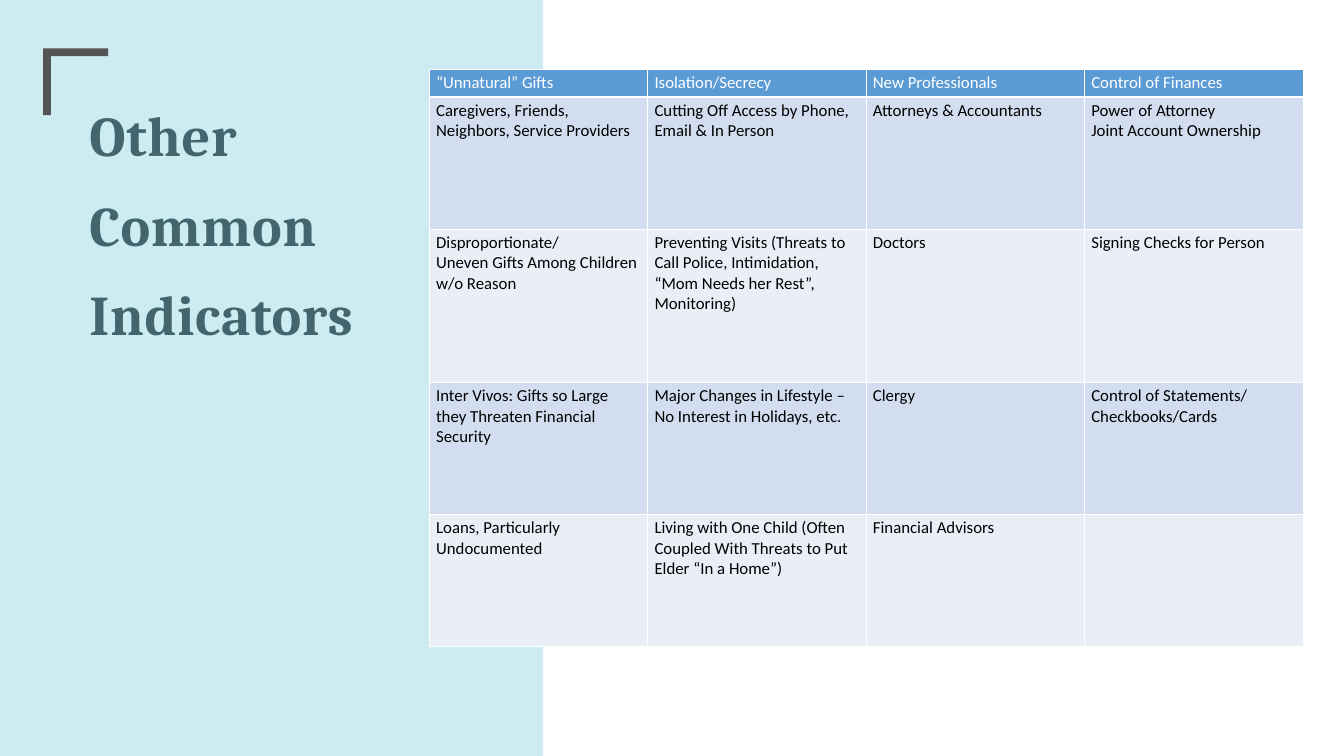
from lxml.etree import SubElement
from pptx import Presentation
from pptx.dml.color import RGBColor
from pptx.enum.shapes import MSO_SHAPE
from pptx.enum.text import MSO_ANCHOR, PP_ALIGN
from pptx.oxml.ns import qn
from pptx.util import Cm, Pt

TEAL = RGBColor(0x00, 0xA2, 0xC0)
GREY = RGBColor(0x54, 0x54, 0x54)
SLATE = RGBColor(0x53, 0x56, 0x5A)
BLUE = RGBColor(0x5B, 0x9B, 0xD5)
BANDS = RGBColor(0xD2, 0xDE, 0xEF), RGBColor(0xEA, 0xEF, 0xF7)
WHITE = RGBColor(0xFF, 0xFF, 0xFF)
BLACK = RGBColor(0x00, 0x00, 0x00)

ROWS = [
    ["“Unnatural” Gifts", "Isolation/Secrecy", "New Professionals",
     "Control of Finances"],
    ["Caregivers, Friends, Neighbors, Service Providers",
     "Cutting Off Access by Phone, Email & In Person",
     "Attorneys & Accountants",
     "Power of Attorney\nJoint Account Ownership"],
    ["Disproportionate/\nUneven Gifts Among Children w/o Reason",
     "Preventing Visits (Threats to Call Police, Intimidation, "
     "“Mom Needs her Rest”, Monitoring)",
     "Doctors", "Signing Checks for Person"],
    ["Inter Vivos: Gifts so Large they Threaten Financial Security",
     "Major Changes in Lifestyle – No Interest in Holidays, etc.",
     "Clergy", "Control of Statements/ Checkbooks/Cards"],
    ["Loans, Particularly Undocumented",
     "Living with One Child (Often Coupled With Threats to Put "
     "Elder “In a Home”)",
     "Financial Advisors", ""],
]
HEIGHTS = [1.04, 5, 5.79, 5, 5]


def write(frame, text, font="Calibri", size=18, color=BLACK, bold=False,
          lead=None, track=None):
    """Fill a text frame, one paragraph a line; lead and track are in points."""
    frame.text = text
    for para in frame.paragraphs:
        para.alignment = PP_ALIGN.LEFT
        if lead:
            para.line_spacing = Pt(lead)
        for run in para.runs:
            run.font.name = font
            run.font.size = Pt(size)
            run.font.bold = bold
            run.font.color.rgb = color
            if track:
                run.font._element.set("spc", str(int(track * 100)))


def paint(shape, color, alpha=None):
    """Give a shape a plain fill; alpha is the opacity in percent."""
    shape.shadow.inherit = False
    shape.line.fill.background()
    shape.fill.solid()
    shape.fill.fore_color.rgb = color
    if alpha:
        tint = shape.fill._xPr.find(qn("a:solidFill"))[0]
        SubElement(tint, qn("a:alpha"), val=str(alpha * 1000))


def add_panel(slide):
    panel = slide.shapes.add_shape(
        MSO_SHAPE.RECTANGLE, Cm(-0.43), Cm(-1.27), Cm(20.96), Cm(29.85))
    paint(panel, TEAL, alpha=20)


def add_corner(slide, left, top, width, height, thick):
    right, low = left + width, top + height
    inx, iny = left + thick, top + thick
    points = [(left, top), (left, low), (inx, low), (inx, iny),
              (right, iny), (right, top)]
    pen = slide.shapes.build_freeform(Cm(right), Cm(top))
    pen.add_line_segments([(Cm(x), Cm(y)) for x, y in points[:-1]])
    paint(pen.convert_to_shape(), GREY)


def set_title(slide, text):
    title = slide.shapes.title
    title.left, title.top = Cm(3.38), Cm(2.95)
    title.width, title.height = Cm(15.98), Cm(9.88)
    frame = title.text_frame
    frame.word_wrap = True
    frame.vertical_anchor = MSO_ANCHOR.TOP
    frame.margin_left = frame.margin_right = 0
    frame.margin_top = frame.margin_bottom = 0
    write(frame, text, font="Cambria", size=60, color=SLATE, bold=True,
          lead=96, track=0.8)


def set_edges(cell, low):
    """Draw white borders of 1 point, and of low points at the bottom."""
    props = cell._tc.get_or_add_tcPr()
    for side, width in zip("LRTB", (1, 1, 1, low)):
        line = SubElement(props, qn(f"a:ln{side}"), w=str(Pt(width)))
        fill = SubElement(line, qn("a:solidFill"))
        SubElement(fill, qn("a:srgbClr"), val=str(WHITE))


def add_grid(slide):
    grid = slide.shapes.add_table(
        len(ROWS), len(ROWS[0]), Cm(16.23), Cm(2.62), Cm(33.02),
        Cm(sum(HEIGHTS))).table
    for r, (texts, height) in enumerate(zip(ROWS, HEIGHTS)):
        grid.rows[r].height = Cm(height)
        head = r == 0
        for c, text in enumerate(texts):
            cell = grid.cell(r, c)
            set_edges(cell, low=3 if head else 1)
            cell.fill.solid()
            cell.fill.fore_color.rgb = BLUE if head else BANDS[(r - 1) % 2]
            write(cell.text_frame, text, color=WHITE if head else BLACK)


def main():
    deck = Presentation()
    deck.slide_width, deck.slide_height = Cm(50.8), Cm(28.58)
    slide = deck.slides.add_slide(deck.slide_layouts[5])
    add_panel(slide)
    add_corner(slide, 1.63, 1.83, 2.46, 2.52, 0.29)
    set_title(slide, "Other\nCommon Indicators")
    add_grid(slide)
    deck.save("out.pptx")


if __name__ == "__main__":
    main()
